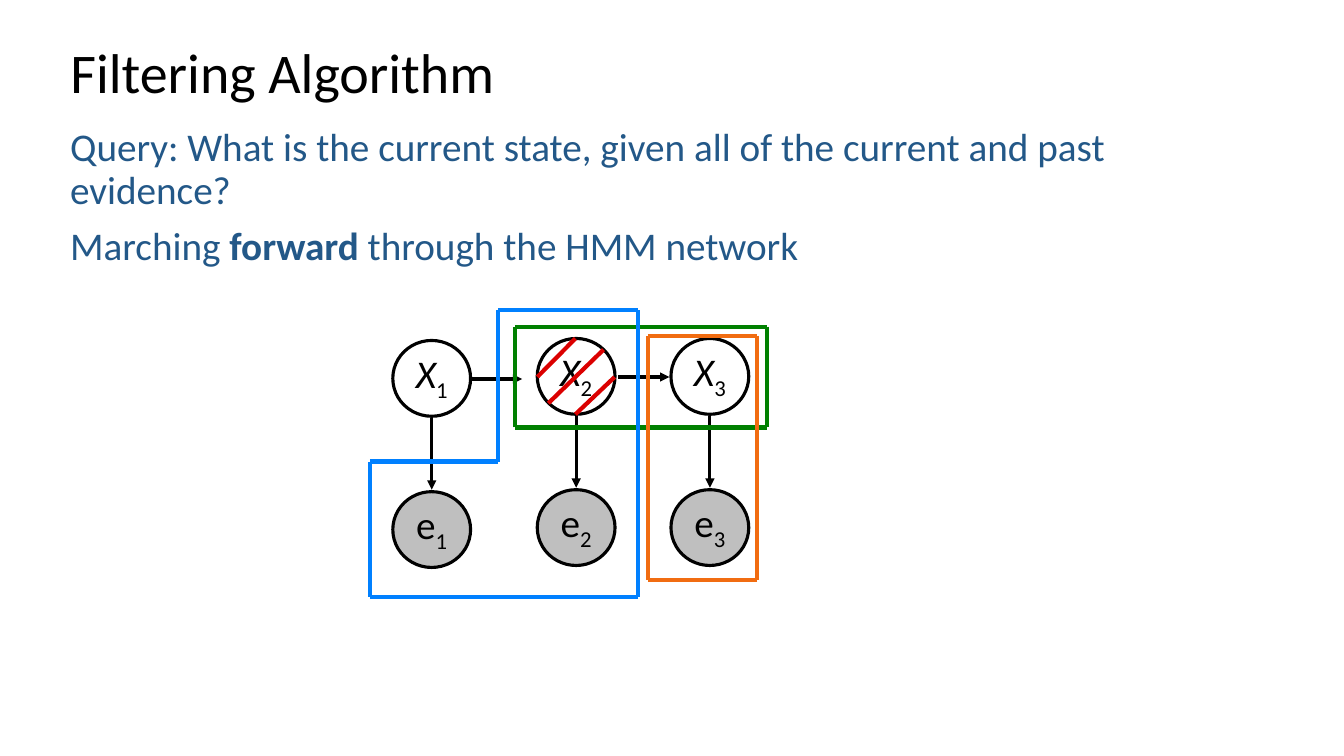
from lxml import etree
from pptx import Presentation
from pptx import util as u
from pptx.dml.color import RGBColor
from pptx.enum import shapes, text
from pptx.oxml import ns

BLACK = RGBColor(0x00, 0x00, 0x00)
WHITE = RGBColor(0xFF, 0xFF, 0xFF)
GRAY = RGBColor(0xBF, 0xBF, 0xBF)
NAVY = RGBColor(0x23, 0x58, 0x88)
RED = RGBColor(0xDB, 0x00, 0x00)
GREEN = RGBColor(0x00, 0x80, 0x00)
ORANGE = RGBColor(0xF1, 0x6C, 0x11)
BLUE = RGBColor(0x00, 0x80, 0xFF)

TEXT_LEFT, TEXT_WIDTH = 1.52, 29.21
NODE_WIDTH, NODE_HEIGHT = 1.96, 1.91
EVIDENCE_DROP = 3.81
ARROW_LENGTH = 1.3


class SlideBuilder:
    """Draws styled elements on the current slide, with positions in centimetres."""

    font = "Calibri"

    def __init__(self, slide):
        self.slide = slide

    def add_run(self, paragraph, wording, size, color, bold=False, italic=False, subscript=False):
        run = paragraph.add_run()
        run.text = wording
        run.font.name = self.font
        run.font.size = u.Pt(size)
        run.font.color.rgb = color
        run.font.bold = bold
        run.font.italic = italic
        if subscript:
            run._r.get_or_add_rPr().set("baseline", "-25000")

    def title(self, wording, top, height):
        shape = self.slide.shapes.title
        shape.left, shape.top = u.Cm(TEXT_LEFT), u.Cm(top)
        shape.width, shape.height = u.Cm(TEXT_WIDTH), u.Cm(height)
        frame = shape.text_frame
        frame.auto_size = text.MSO_AUTO_SIZE.NONE
        frame.vertical_anchor = text.MSO_ANCHOR.MIDDLE
        paragraph = frame.paragraphs[0]
        paragraph.alignment = text.PP_ALIGN.LEFT
        paragraph.line_spacing = 0.9
        self.add_run(paragraph, wording, 40, BLACK)

    def body(self, paragraphs, top, height):
        shape = self.slide.shapes.add_textbox(
            u.Cm(TEXT_LEFT), u.Cm(top), u.Cm(TEXT_WIDTH), u.Cm(height))
        frame = shape.text_frame
        frame.word_wrap = True
        for index, runs in enumerate(paragraphs):
            paragraph = frame.add_paragraph() if index else frame.paragraphs[0]
            paragraph.line_spacing = 0.9
            paragraph.space_before = u.Pt(10)
            for wording, bold in runs:
                self.add_run(paragraph, wording, 28, NAVY, bold=bold)

    def node(self, center, top, letter, step, fill, italic):
        shape = self.slide.shapes.add_shape(
            shapes.MSO_SHAPE.OVAL, u.Cm(center - NODE_WIDTH / 2), u.Cm(top),
            u.Cm(NODE_WIDTH), u.Cm(NODE_HEIGHT))
        shape.shadow.inherit = False
        shape.fill.solid()
        shape.fill.fore_color.rgb = fill
        shape.line.color.rgb = BLACK
        shape.line.width = u.Pt(2.25)
        frame = shape.text_frame
        frame.word_wrap = False
        frame.vertical_anchor = text.MSO_ANCHOR.MIDDLE
        frame.margin_top = 0
        paragraph = frame.paragraphs[0]
        paragraph.alignment = text.PP_ALIGN.CENTER
        self.add_run(paragraph, letter, 28, BLACK, italic=italic)
        self.add_run(paragraph, str(step), 28, BLACK, subscript=True)

    def line(self, start, end, color, width, container=None):
        owner = container or self.slide
        connector = owner.shapes.add_connector(
            shapes.MSO_CONNECTOR.STRAIGHT, *map(u.Cm, (*start, *end)))
        connector.line.color.rgb = color
        connector.line.width = u.Pt(width)
        etree.SubElement(connector._element.spPr, ns.qn("a:effectLst"))
        return connector

    def arrow(self, start, end):
        connector = self.line(start, end, BLACK, 2.25)
        outline = connector.line._get_or_add_ln()
        etree.SubElement(outline, ns.qn("a:tailEnd"), type="triangle")

    def line_group(self, segments, color):
        group = self.slide.shapes.add_group_shape()
        for start, end in segments:
            self.line(start, end, color, 3, group)

    def frame(self, corners, color):
        self.line_group(zip(corners, corners[1:] + corners[:1]), color)

    def box(self, left, top, right, bottom, color):
        self.frame([(left, top), (right, top), (right, bottom), (left, bottom)], color)


def main():
    presentation = Presentation()
    presentation.slide_width, presentation.slide_height = u.Cm(33.87), u.Cm(19.05)
    builder = SlideBuilder(presentation.slides.add_slide(presentation.slide_layouts[5]))

    builder.title("Filtering Algorithm", 1.02, 1.75)
    builder.body([
        [("Query: What is the current state, given all of the current and past evidence?", False)],
        [("Marching ", False), ("forward", True), (" through the HMM network", False)],
    ], 3.1, 5.66)

    columns = [(10.88, 8.58), (14.52, 8.53), (17.89, 8.53)]
    for step, (center, top) in enumerate(columns, start=1):
        builder.node(center, top, "X", step, WHITE, True)
        builder.node(center, top + EVIDENCE_DROP, "e", step, GRAY, False)
        builder.arrow((center, top + 1.96), (center, top + 3.76))
    for start, middle in [(11.86, 9.55), (15.57, 9.5)]:
        builder.arrow((start, middle), (start + ARROW_LENGTH, middle))

    builder.line_group([
        ((13.54, 9.5), (14.5, 8.53)),
        ((13.82, 10.16), (15.21, 8.81)),
        ((14.5, 10.44), (15.49, 9.5)),
    ], RED)
    builder.box(12.98, 8.23, 19.33, 10.77, GREEN)
    builder.box(16.33, 8.46, 19.08, 14.61, ORANGE)
    builder.frame([
        (9.32, 11.63), (12.55, 11.63), (12.55, 7.82),
        (16.08, 7.82), (16.08, 15.04), (9.32, 15.04),
    ], BLUE)

    presentation.save("out.pptx")


if __name__ == "__main__":
    main()
